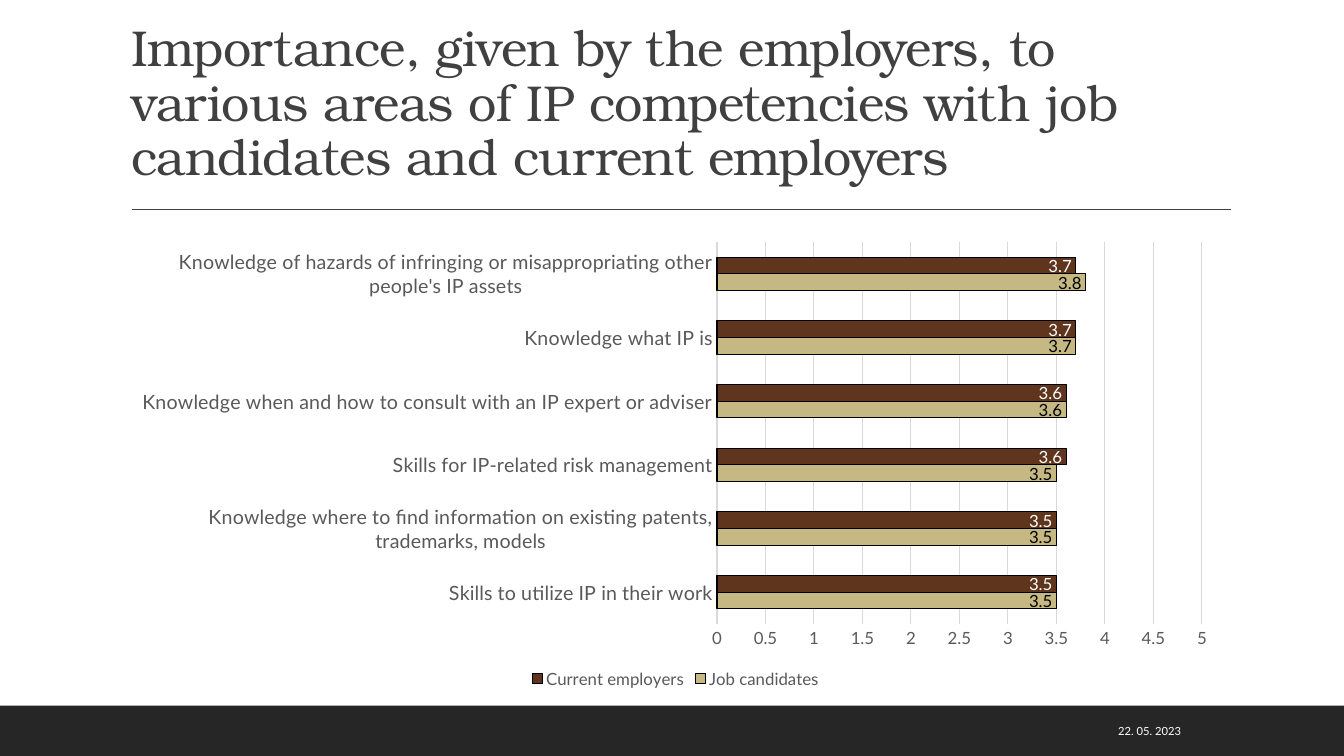
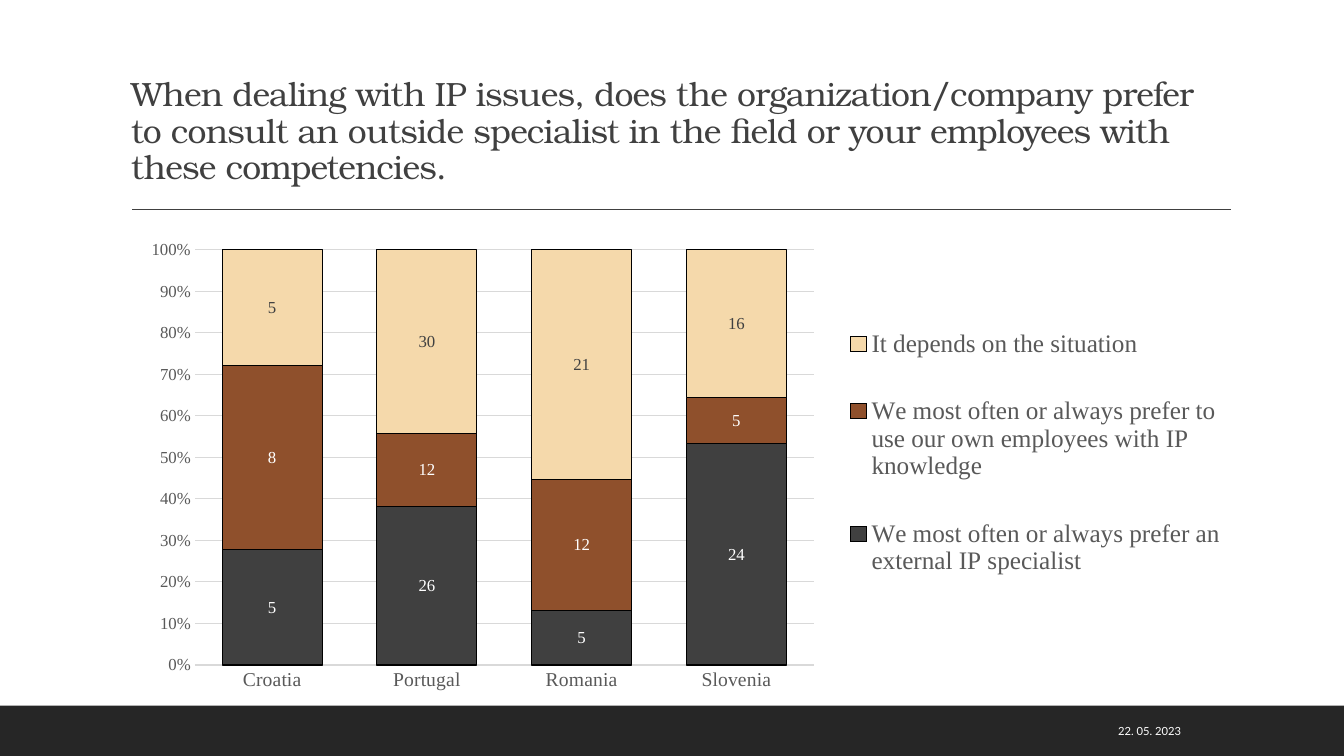
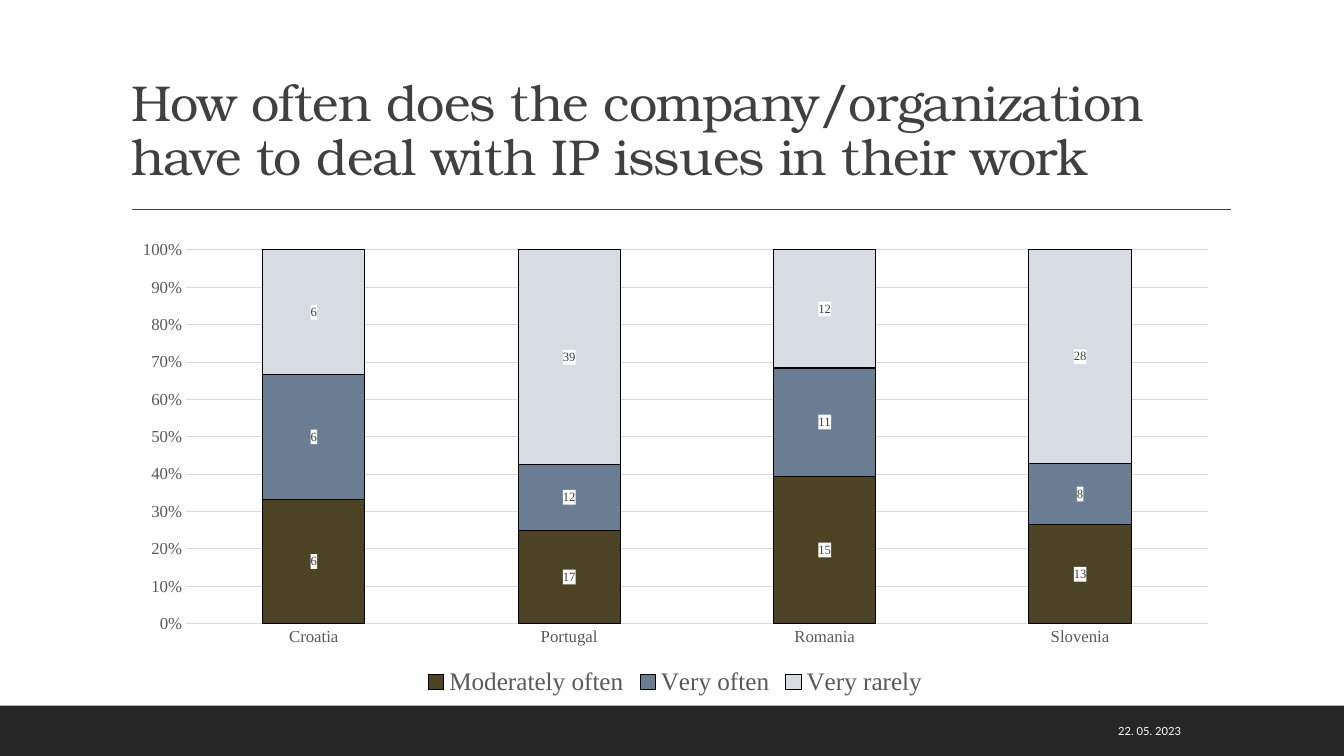
"""Build three slides of survey charts on intellectual property competencies."""
from lxml.etree import SubElement
from pptx import Presentation
from pptx.chart.data import CategoryChartData
from pptx.dml.color import RGBColor
from pptx.enum.chart import XL_CHART_TYPE as ChartKind
from pptx.enum.chart import XL_LABEL_POSITION as LabelPos
from pptx.enum.chart import XL_LEGEND_POSITION as LegendPos
from pptx.enum.chart import XL_TICK_MARK as Tick
from pptx.enum.shapes import MSO_CONNECTOR, MSO_SHAPE
from pptx.enum.text import MSO_ANCHOR, MSO_AUTO_SIZE, PP_ALIGN
from pptx.oxml import parse_xml
from pptx.oxml.ns import nsdecls, qn
from pptx.util import Cm, Pt

BLACK = RGBColor(0x00, 0x00, 0x00)
WHITE = RGBColor(0xFF, 0xFF, 0xFF)
BAND = RGBColor(0x26, 0x26, 0x26)
CHARCOAL = RGBColor(0x40, 0x40, 0x40)
GREY = RGBColor(0x59, 0x59, 0x59)
GRID = RGBColor(0xD9, 0xD9, 0xD9)
KHAKI = RGBColor(0xC5, 0xB8, 0x83)
BROWN = RGBColor(0x60, 0x35, 0x1D)
RUST = RGBColor(0x8F, 0x50, 0x2C)
SAND = RGBColor(0xF5, 0xD9, 0xAB)
OLIVE = RGBColor(0x4B, 0x43, 0x23)
SLATE = RGBColor(0x6A, 0x7D, 0x93)
MIST = RGBColor(0xD7, 0xDC, 0xE2)

HEADING, SANS, SERIF = "TeX Gyre Bonum", "Lato", "Times New Roman"
DATE = "22. 05. 2023"
WIDTH, HEIGHT, BAND_HEIGHT = 33.87, 19.05, 1.27
TITLE_BOX = (3.05, 0.79, 27.94, 4.04)
DATE_BOX = (22.83, 17.91, 7.19, 1.02)
RULE = (3.33, 5.28, 31.01, 5.28)
COUNTRIES = ["Croatia", "Portugal", "Romania", "Slovenia"]

SLIDES = [
    {
        "title": "Importance, given by the employers, to various areas of IP "
                 "competencies with job candidates and current employers",
        "title_size": 36,
        "kind": ChartKind.BAR_CLUSTERED,
        "box": (3.05, 5.87, 27.94, 11.58),
        "plot": (18.07, 6.1, 12.22, 9.63),
        "font": SANS, "category_size": 14, "gap": 182,
        "legend": LegendPos.BOTTOM, "legend_size": 12,
        "label_size": 12, "label_pos": LabelPos.INSIDE_END,
        "categories": [
            "Skills to utilize IP in their work",
            "Knowledge where to find information on existing patents, trademarks, models",
            "Skills for IP-related risk management",
            "Knowledge when and how to consult with an IP expert or adviser",
            "Knowledge what IP is",
            "Knowledge of hazards of infringing or misappropriating other people's IP assets",
        ],
        "series": [
            ("Job candidates", (3.5, 3.5, 3.5, 3.6, 3.7, 3.8), KHAKI, BLACK),
            ("Current employers", (3.5, 3.5, 3.6, 3.6, 3.7, 3.7), BROWN, WHITE),
        ],
    },
    {
        "title": "When dealing with IP issues, does the organization/company prefer to "
                 "consult an outside specialist in the field or your employees with "
                 "these competencies.",
        "title_size": 24,
        "kind": ChartKind.COLUMN_STACKED_100,
        "box": (3.28, 5.87, 27.71, 11.79),
        "plot": (4.91, 6.3, 15.6, 10.46),
        "font": SERIF, "category_size": 14, "gap": 55,
        "legend": LegendPos.RIGHT, "legend_size": 18,
        "legend_box": (21.2, 7.3, 9.8, 8.2),
        "label_size": 12, "label_pos": LabelPos.CENTER,
        "categories": COUNTRIES,
        "series": [
            ("We most often or always prefer an external IP specialist",
             (5, 26, 5, 24), CHARCOAL, WHITE),
            ("We most often or always prefer to use our own employees with IP knowledge",
             (8, 12, 12, 5), RUST, WHITE),
            ("It depends on the situation", (5, 30, 21, 16), SAND, CHARCOAL),
        ],
    },
    {
        "title": "How often does the company/organization have to deal with IP issues "
                 "in their work",
        "title_size": 36,
        "kind": ChartKind.COLUMN_STACKED_100,
        "box": (3.05, 5.87, 27.94, 11.79),
        "plot": (4.69, 6.3, 25.75, 9.42),
        "font": SERIF, "category_size": 12, "gap": 150,
        "legend": LegendPos.BOTTOM, "legend_size": 18,
        "label_size": 9, "label_pos": LabelPos.CENTER, "label_fill": WHITE,
        "categories": COUNTRIES,
        "series": [
            ("Moderately often", (6, 17, 15, 13), OLIVE, CHARCOAL),
            ("Very often", (6, 12, 11, 8), SLATE, CHARCOAL),
            ("Very rarely", (6, 39, 12, 28), MIST, CHARCOAL),
        ],
    },
]


def lengths(box):
    return [Cm(value) for value in box]


def style_font(font, name, size, color):
    font.name, font.size = name, Pt(size)
    font.color.rgb = color


def style_line(line, color, width=0.75):
    line.color.rgb = color
    line.width = Pt(width)


def add_frame_to_layout(slide, layout):
    for placeholder in list(layout.placeholders)[1:]:
        layout.shapes.element.remove(placeholder.element)
    band = slide.shapes.add_shape(
        MSO_SHAPE.RECTANGLE,
        *lengths((0, HEIGHT - BAND_HEIGHT, WIDTH, BAND_HEIGHT)))
    band.shadow.inherit = False
    band.fill.solid()
    band.fill.fore_color.rgb = BAND
    band.line.fill.background()
    rule = slide.shapes.add_connector(MSO_CONNECTOR.STRAIGHT, *lengths(RULE))
    style_line(rule.line, CHARCOAL, 1)
    SubElement(rule.element.spPr, qn("a:effectLst"))
    for part in (band, rule):
        layout.shapes.element.append(part.element)


def set_title(slide, text, size):
    title = slide.shapes.title
    title.left, title.top, title.width, title.height = lengths(TITLE_BOX)
    frame = title.text_frame
    frame.text = text
    frame.word_wrap = True
    frame.auto_size = MSO_AUTO_SIZE.NONE
    frame.vertical_anchor = MSO_ANCHOR.BOTTOM
    heading = frame.paragraphs[0]
    heading.alignment = PP_ALIGN.LEFT
    heading.line_spacing = 0.9
    run = heading.runs[0]
    style_font(run.font, HEADING, size, CHARCOAL)
    run.font.element.set("spc", "-50") if hasattr(run.font, "element") else \
        run.text and heading.runs[0]._r.get_or_add_rPr().set("spc", "-50")


def add_date(slide):
    frame = slide.shapes.add_textbox(*lengths(DATE_BOX)).text_frame
    frame.text = DATE
    frame.word_wrap = True
    frame.vertical_anchor = MSO_ANCHOR.MIDDLE
    date = frame.paragraphs[0]
    date.alignment = PP_ALIGN.RIGHT
    style_font(date.runs[0].font, SANS, 8, WHITE)


def manual_layout(area, box, target=""):
    left, top, width, height = box
    shares = {
        "x": (area[0] - left) / width, "y": (area[1] - top) / height,
        "w": area[2] / width, "h": area[3] / height,
    }
    modes = "".join(f'<c:{axis}Mode val="edge"/>' for axis in "xy")
    sizes = "".join(f'<c:{key} val="{share:.4f}"/>' for key, share in shares.items())
    return parse_xml(f'<c:layout {nsdecls("c")}><c:manualLayout>{target}{modes}{sizes}'
                     "</c:manualLayout></c:layout>")


def place_parts(chart, item):
    space = chart.element
    for old in space.xpath(".//c:plotArea/c:layout | .//c:legend/c:layout"):
        old.getparent().remove(old)
    inner = '<c:layoutTarget val="inner"/>'
    space.xpath(".//c:plotArea")[0].insert(
        0, manual_layout(item["plot"], item["box"], inner))
    if "legend_box" in item:
        space.xpath(".//c:legend/c:overlay")[0].addprevious(
            manual_layout(item["legend_box"], item["box"]))
    if "label_fill" in item:
        for text_style in space.xpath(".//c:dLbls/c:txPr"):
            text_style.addprevious(parse_xml(
                f'<c:spPr {nsdecls("c", "a")}><a:solidFill>'
                f'<a:srgbClr val="{item["label_fill"]}"/></a:solidFill></c:spPr>'))


def style_axes(chart, item):
    category, value = chart.category_axis, chart.value_axis
    for axis, size in ((category, item["category_size"]), (value, 12)):
        axis.major_tick_mark = axis.minor_tick_mark = Tick.NONE
        style_font(axis.tick_labels.font, item["font"], size, GREY)
    style_line(category.format.line, GRID)
    value.format.line.fill.background()
    value.has_major_gridlines = True
    style_line(value.major_gridlines.format.line, GRID)
    value.minimum_scale = 0
    if item["kind"] == ChartKind.BAR_CLUSTERED:
        value.maximum_scale, value.major_unit = 5, 0.5
    else:
        value.tick_labels.number_format = "0%"
        value.tick_labels.number_format_is_linked = False


def add_survey_chart(slide, item):
    data = CategoryChartData()
    data.categories = item["categories"]
    for name, values, _, _ in item["series"]:
        data.add_series(name, values)
    chart = slide.shapes.add_chart(item["kind"], *lengths(item["box"]), data).chart
    chart.has_title = False
    style_font(chart.font, item["font"], 12, BLACK)
    style_axes(chart, item)
    plot = chart.plots[0]
    plot.vary_by_categories = False
    plot.gap_width = item["gap"]
    if item["kind"] == ChartKind.COLUMN_STACKED_100:
        plot.overlap = 100
    for series, (_, _, color, label_color) in zip(plot.series, item["series"]):
        series.format.fill.solid()
        series.format.fill.fore_color.rgb = color
        style_line(series.format.line, BLACK)
        labels = series.data_labels
        labels.show_value = True
        labels.position = item["label_pos"]
        style_font(labels.font, item["font"], item["label_size"], label_color)
    chart.has_legend = True
    chart.legend.position = item["legend"]
    chart.legend.include_in_layout = False
    style_font(chart.legend.font, item["font"], item["legend_size"], GREY)
    place_parts(chart, item)


def main():
    deck = Presentation()
    deck.slide_width, deck.slide_height = Cm(WIDTH), Cm(HEIGHT)
    layout = deck.slide_layouts[5]
    for number, item in enumerate(SLIDES):
        slide = deck.slides.add_slide(layout)
        if number == 0:
            add_frame_to_layout(slide, layout)
        set_title(slide, item["title"], item["title_size"])
        add_date(slide)
        add_survey_chart(slide, item)
    deck.save("out.pptx")


if __name__ == "__main__":
    main()
